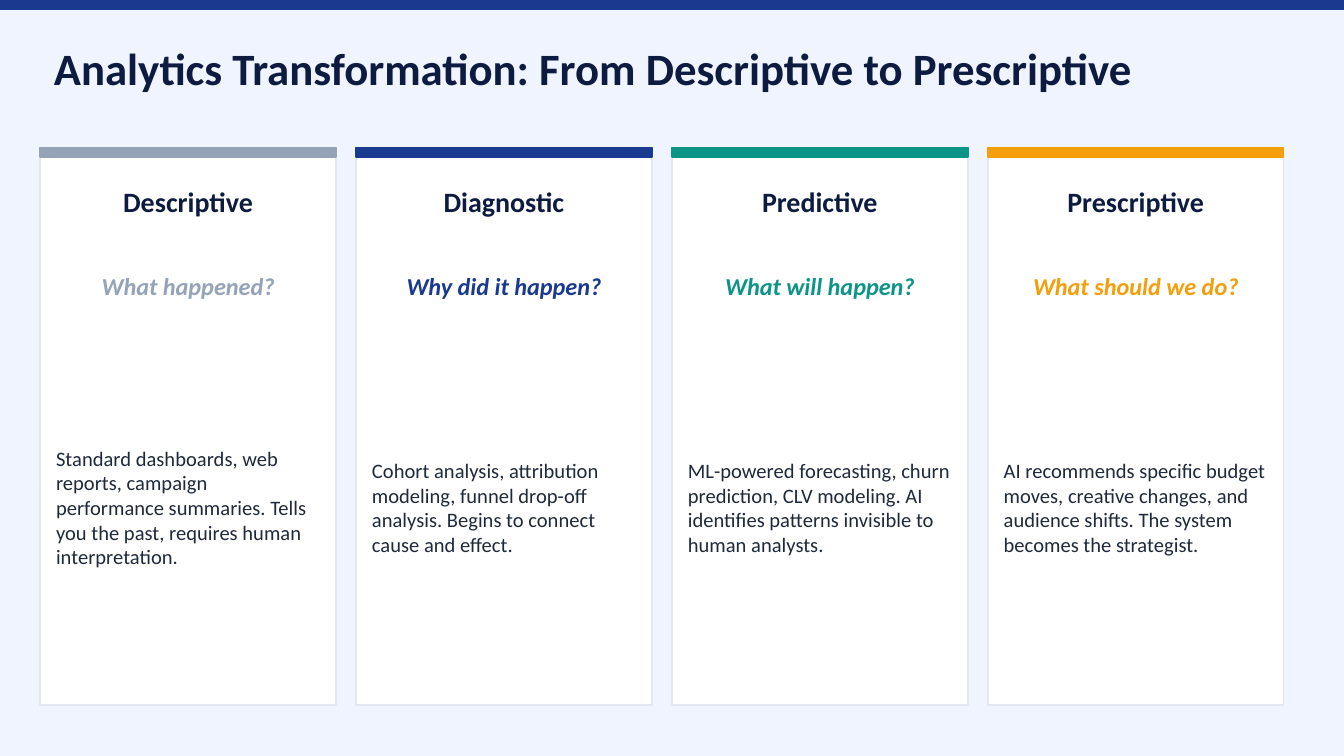
from dataclasses import dataclass

from pptx import Presentation
from pptx import util as u
from pptx.dml.color import RGBColor
from pptx.enum import shapes, text


@dataclass(frozen=True)
class Theme:
    font: str = "Calibri"
    background: str = "F0F4FF"
    heading: str = "0D1B40"
    body: str = "1E293B"
    card: str = "FFFFFF"
    card_border: str = "E2E8F0"
    slate: str = "94A3B8"
    blue: str = "1A3A8F"
    teal: str = "0D9488"
    amber: str = "F59E0B"
    title_size: int = 24
    stage_size: int = 15
    question_size: int = 13
    body_size: int = 11


THEME = Theme()
SLIDE_WIDTH, SLIDE_HEIGHT = 25.4, 14.29
BAND_HEIGHT = 0.18

STAGES = [
    ("Descriptive", "What happened?", THEME.slate,
     "Standard dashboards, web reports, campaign performance summaries. "
     "Tells you the past, requires human interpretation."),
    ("Diagnostic", "Why did it happen?", THEME.blue,
     "Cohort analysis, attribution modeling, funnel drop-off analysis. "
     "Begins to connect cause and effect."),
    ("Predictive", "What will happen?", THEME.teal,
     "ML-powered forecasting, churn prediction, CLV modeling. "
     "AI identifies patterns invisible to human analysts."),
    ("Prescriptive", "What should we do?", THEME.amber,
     "AI recommends specific budget moves, creative changes, and audience "
     "shifts. The system becomes the strategist."),
]


def add_panel(slide, left, top, width, height, fill, border):
    panel = slide.shapes.add_shape(
        shapes.MSO_SHAPE.RECTANGLE, *map(u.Cm, (left, top, width, height)))
    panel.shadow.inherit = False
    panel.fill.solid()
    panel.fill.fore_color.rgb = RGBColor.from_string(fill)
    panel.line.color.rgb = RGBColor.from_string(border)
    panel.line.width = u.Pt(1)


def add_label(slide, left, top, width, height, wording, size, color,
              bold=False, italic=False, align=text.PP_ALIGN.LEFT):
    label = slide.shapes.add_textbox(*map(u.Cm, (left, top, width, height)))
    frame = label.text_frame
    frame.word_wrap = True
    frame.vertical_anchor = text.MSO_ANCHOR.MIDDLE
    frame.margin_left = frame.margin_right = 0
    frame.margin_top = frame.margin_bottom = 0
    frame.text = wording
    paragraph = frame.paragraphs[0]
    paragraph.alignment = align
    font = paragraph.runs[0].font
    font.name, font.size = THEME.font, u.Pt(size)
    font.bold, font.italic = bold, italic
    font.color.rgb = RGBColor.from_string(color)


def add_header(slide, left, top, width):
    # Band across the top edge, then the title
    add_panel(slide, left, top, width, BAND_HEIGHT, THEME.blue, THEME.blue)
    margin = 1.02
    add_label(slide, left + margin, top + 0.46, width - 2 * margin, 1.65,
              "Analytics Transformation: From Descriptive to Prescriptive",
              THEME.title_size, THEME.heading, bold=True)


def add_stage_card(slide, left, top, width, height, stage):
    name, question, accent, description = stage
    center = text.PP_ALIGN.CENTER
    padding = 0.3

    # Card with its accent band
    add_panel(slide, left, top, width, height, THEME.card, THEME.card_border)
    add_panel(slide, left, top, width, BAND_HEIGHT, accent, accent)

    # Stage name, key question and description
    add_label(slide, left, top + 0.38, width, 1.27, name,
              THEME.stage_size, THEME.heading, bold=True, align=center)
    add_label(slide, left, top + 1.91, width, 1.4, question,
              THEME.question_size, accent, bold=True, italic=True, align=center)
    add_label(slide, left + padding, top + 3.56, width - 2 * padding,
              height - 4.06, description, THEME.body_size, THEME.body)


def add_stages(slide, left, top, width, height):
    # Equal columns with a fixed gap
    gap = 0.38
    card_width = (width - gap * (len(STAGES) - 1)) / len(STAGES)
    for column, stage in enumerate(STAGES):
        add_stage_card(slide, left + column * (card_width + gap), top,
                       card_width, height, stage)


def main():
    deck = Presentation()
    deck.slide_width, deck.slide_height = u.Cm(SLIDE_WIDTH), u.Cm(SLIDE_HEIGHT)
    slide = deck.slides.add_slide(deck.slide_layouts[6])
    slide.background.fill.solid()
    slide.background.fill.fore_color.rgb = RGBColor.from_string(THEME.background)

    add_header(slide, 0, 0, SLIDE_WIDTH)
    add_stages(slide, 0.76, 2.79, 23.5, 10.54)
    deck.save("out.pptx")


if __name__ == "__main__":
    main()
